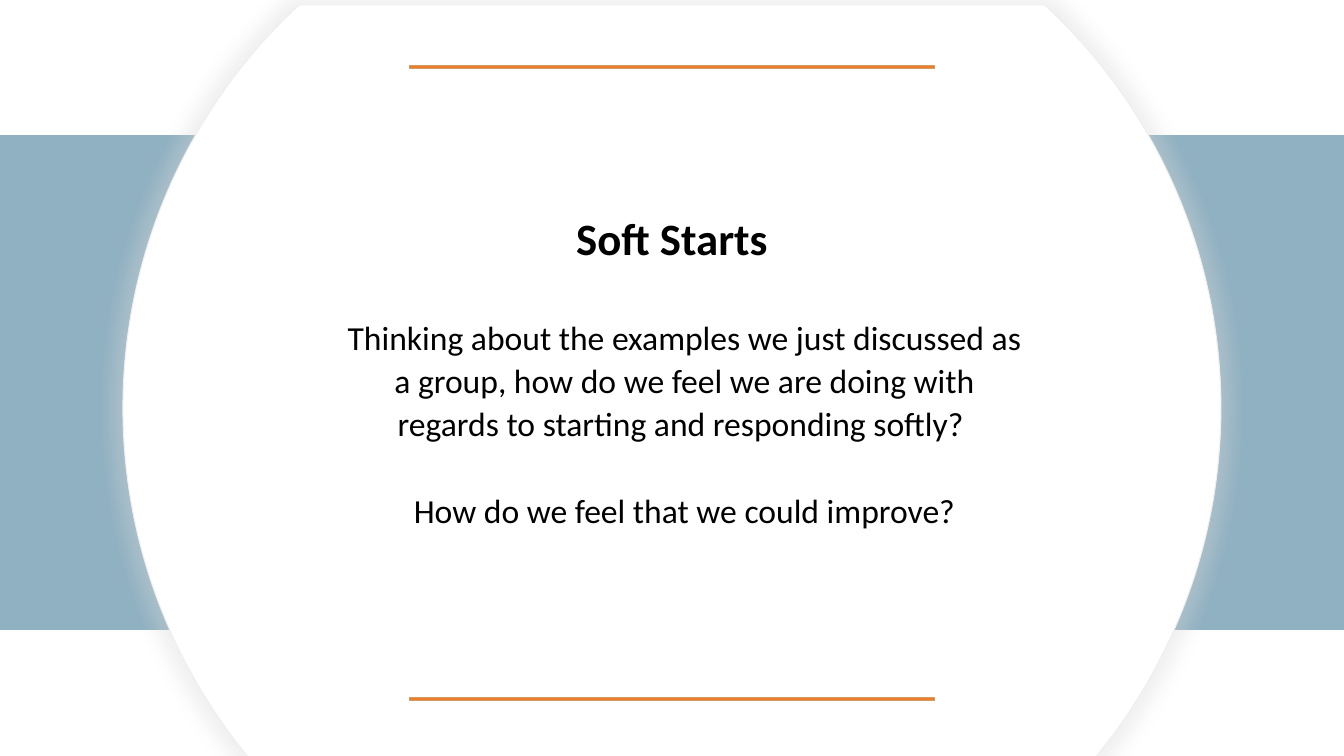
from math import asin, cos, pi, sin, tan

from lxml.etree import SubElement
from pptx import Presentation
from pptx.dml.color import RGBColor
from pptx.enum.shapes import MSO_SHAPE as Preset
from pptx.enum.text import MSO_ANCHOR as Anchor, PP_ALIGN as Align
from pptx.oxml.ns import qn
from pptx.util import Emu, Pt

WIDTH, HEIGHT = 1344, 756
PX = 914400 / 100.8


def px(length):
    return Emu(round(length * PX))


def color(value):
    return RGBColor.from_string(value)


class Slide:
    font = "Calibri"
    ink = "000000"
    line_width = 0.75

    def __init__(self, deck):
        self.page = deck.slides.add_slide(deck.slide_layouts[6])

    def paint(self, shape, fill, line):
        shape.shadow.inherit = False
        shape.fill.solid()
        shape.fill.fore_color.rgb = color(fill)
        shape.line.color.rgb = color(line)
        shape.line.width = Pt(self.line_width)

    def bar(self, left, top, width, height, fill, line):
        box = self.page.shapes.add_shape(
            Preset.RECTANGLE, px(left), px(top), px(width), px(height))
        self.paint(box, fill, line)

    def cut_disc(self, center_x, center_y, radius, top, bottom, fill, line):
        upper = asin((top - center_y) / radius)
        lower = asin((bottom - center_y) / radius)
        angles = [upper, 0, lower, pi - lower, pi, pi - upper]
        points = [(px(center_x + radius * cos(a)), px(center_y + radius * sin(a)))
                  for a in angles]
        outline = self.page.shapes.build_freeform(*points[0], scale=1.0)
        outline.add_line_segments(points[1:], close=True)
        disc = outline.convert_to_shape()
        edges = list(disc._element.iter(qn("a:lnTo")))
        for end in (1, 2, 4, 5):
            self.bend(edges[end - 1], disc, center_x, center_y, radius,
                      angles[end - 1], angles[end])
        self.paint(disc, fill, line)
        return disc

    def bend(self, edge, disc, center_x, center_y, radius, start, end):
        reach = 4 / 3 * tan((end - start) / 4)
        edge.tag = qn("a:cubicBezTo")
        for index, (angle, pull) in enumerate(((start, reach), (end, -reach))):
            x = px(center_x + radius * (cos(angle) - pull * sin(angle))) - disc.left
            y = px(center_y + radius * (sin(angle) + pull * cos(angle))) - disc.top
            handle = SubElement(edge, qn("a:pt"), x=str(x), y=str(y))
            edge.insert(index, handle)

    def glow(self, shape, tint, opacity, blur, growth):
        effects = shape._element.spPr.find(qn("a:effectLst"))
        stretch = str(growth * 1000)
        shadow = SubElement(effects, qn("a:outerShdw"), blurRad=str(Pt(blur)),
                            dist="0", dir="0", sx=stretch, sy=stretch,
                            algn="ctr", rotWithShape="0")
        shade = SubElement(shadow, qn("a:srgbClr"), val=tint)
        SubElement(shade, qn("a:alpha"), val=str(opacity * 1000))

    def text(self, left, top, width, height, lines, size, bold=False,
             spacing=1.0, gap=0, inset=5):
        box = self.page.shapes.add_textbox(px(left), px(top), px(width), px(height))
        frame = box.text_frame
        frame.word_wrap = True
        frame.vertical_anchor = Anchor.MIDDLE
        frame.margin_top = px(inset)
        for index, line in enumerate(lines):
            para = frame.add_paragraph() if index else frame.paragraphs[0]
            para.alignment = Align.CENTER
            para.line_spacing = spacing
            para.space_before = Pt(gap if index else 0)
            span = para.add_run()
            span.text = line
            span.font.name = self.font
            span.font.size = Pt(size)
            span.font.bold = bold
            span.font.color.rgb = color(self.ink)


def main():
    deck = Presentation()
    deck.slide_width, deck.slide_height = px(WIDTH), px(HEIGHT)
    slide = Slide(deck)

    slide.bar(0, 136, WIDTH, 494, "90B1C2", "90B1C2")
    disc = slide.cut_disc(672, 408, 549, 5, 761, "FFFFFF", "EFEFEF")
    slide.glow(disc, "D8D8D8", opacity=36, blur=11, growth=102)

    slide.text(353, 201, 638, 74, ["Soft Starts"], size=32, bold=True)
    for top in (66, 698):
        slide.bar(410, top, 525, 3, "ED7D31", "D09D5C")
    slide.text(335, 231, 699, 350, [
        "Thinking about the examples we just discussed as a group, how do we feel "
        "we are doing with regards to starting and responding softly? ",
        "How do we feel that we could improve?",
    ], size=24, spacing=1.07, gap=31, inset=37)

    deck.save("out.pptx")


if __name__ == "__main__":
    main()
